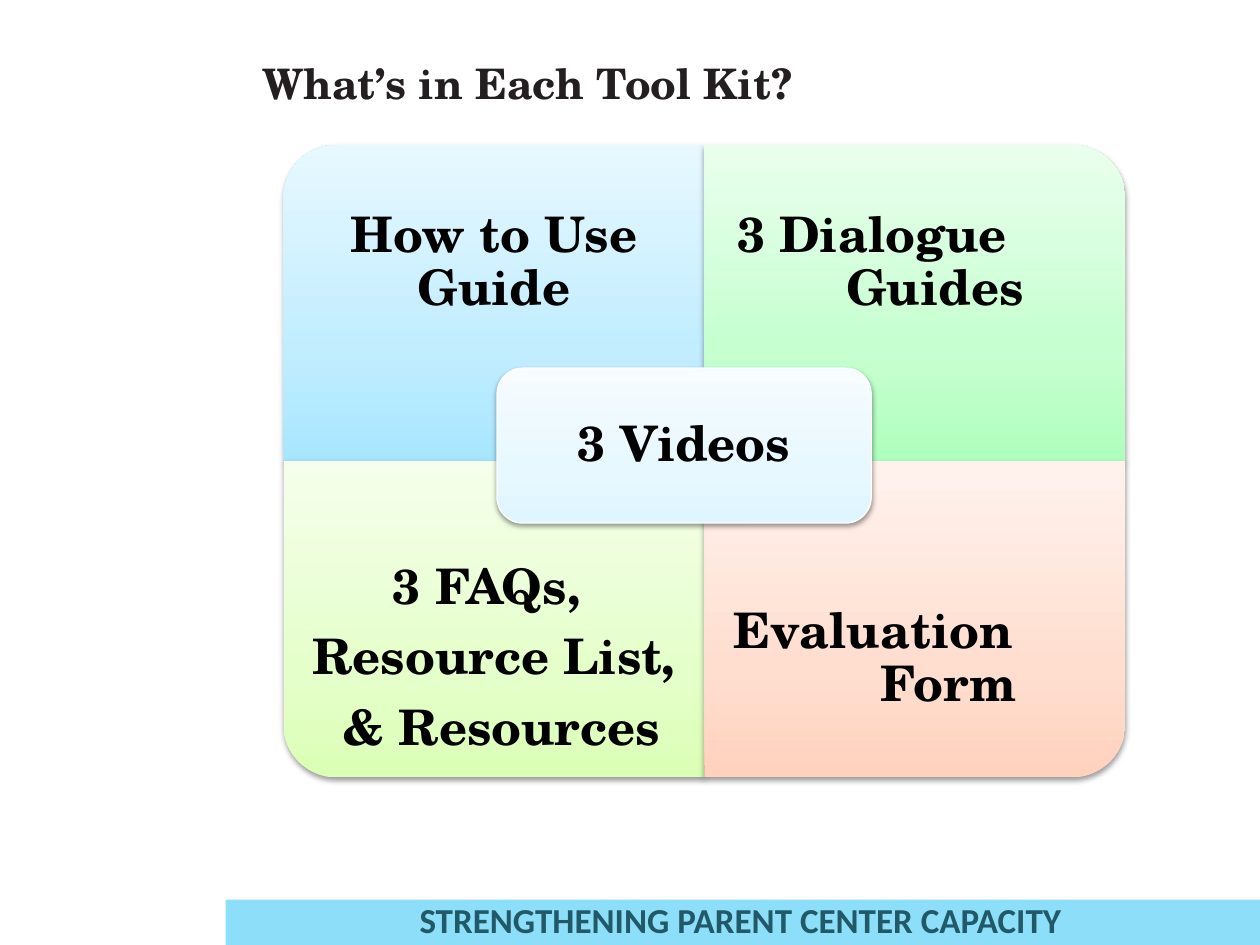
"""Build the tool kit slide: four rounded panels around a central label."""
from dataclasses import dataclass

from lxml import etree
from pptx import Presentation
from pptx import util as u
from pptx.dml.color import RGBColor
from pptx.enum import shapes, text
from pptx.oxml import parse_xml
from pptx.oxml.ns import nsdecls, qn


@dataclass(frozen=True)
class Theme:
    """Colours, fonts and type sizes."""
    serif: str = "TeX Gyre Schola"
    sans: str = "Calibri"
    title: str = "231F20"
    label: str = "000000"
    bar: str = "8DDEF8"
    footer: str = "215968"
    edge: str = "FFFFFF"
    title_size: int = 24
    label_size: int = 28
    footer_size: int = 20


THEME = Theme()
SLIDE_W, SLIDE_H = 10, 7.5
GRID_LEFT, GRID_TOP, CELL_W, CELL_H = 2.25, 1.15, 3.34, 2.51
TEXT_H = CELL_H * 0.75
HUB_W, HUB_H = 2.97, 1.23
BAR_LEFT, BAR_H = 1.79, 0.36
PARAGRAPH_GAP = 10

TITLE = "What’s in Each Tool Kit?"
FOOTER = ["STRENGTHENING ", "PARENT ", "CENTER CAPACITY"]
CENTER, LEFT = text.PP_ALIGN.CENTER, text.PP_ALIGN.LEFT
PANELS = [
    dict(col=0, row=0, turn=270, stops=("A7E6FF", "C1EDFF", "E7F8FF"), gap=0,
         lines=[("How to Use", 0, CENTER), ("Guide", 0, CENTER)]),
    dict(col=1, row=0, turn=0, stops=("AFFFBD", "C6FFD0", "E9FFED"), gap=0,
         lines=[("3 Dialogue", 0.04, LEFT), ("Guides", 0.32, CENTER)]),
    dict(col=0, row=1, turn=180, stops=("DBFFB6", "E5FFCB", "F5FFEB"), gap=PARAGRAPH_GAP,
         lines=[("3 FAQs, ", 0, CENTER), ("Resource List,", 0, CENTER),
                ("& Resources", 0.12, CENTER)]),
    dict(col=1, row=1, turn=90, stops=("FFD2BD", "FFDED0", "FFF2ED"), gap=0,
         lines=[("Evaluation", 0.01, LEFT), ("Form", 0.54, CENTER)]),
]
HUB = dict(stops=("DFF5FF", "E8F8FF", "F6FCFF"), lines=[("3 Videos", 0, CENTER)])


def inches(*lengths):
    return [u.Inches(length) for length in lengths]


def add_run(paragraph, words, font, size, color):
    run = paragraph.add_run()
    run.text = words
    run.font.name, run.font.size, run.font.bold = font, u.Pt(size), True
    run.font.color.rgb = RGBColor.from_string(color)


def prepare(frame, inset, anchor):
    frame.word_wrap = True
    frame.vertical_anchor = anchor
    frame.margin_left = frame.margin_right = u.Inches(inset)
    frame.margin_top = frame.margin_bottom = u.Inches(inset)


def write_lines(frame, lines, inset, gap=0):
    prepare(frame, inset, text.MSO_ANCHOR.MIDDLE)
    for index, (words, indent, align) in enumerate(lines):
        paragraph = frame.add_paragraph() if index else frame.paragraphs[0]
        paragraph.alignment = align
        paragraph.line_spacing = 0.9
        last = index == len(lines) - 1
        paragraph.space_after = u.Pt(PARAGRAPH_GAP if last else gap)
        if indent:
            paragraph._p.get_or_add_pPr().set("marL", str(u.Inches(indent)))
        add_run(paragraph, words, THEME.serif, THEME.label_size, THEME.label)


def add_tile(slide, preset, box, stops, turn=0):
    tile = slide.shapes.add_shape(preset, *inches(*box))
    tile.rotation = turn
    tile.line.fill.background()
    tile.fill.gradient()
    gradient = tile._element.spPr.find(qn("a:gradFill"))
    gradient.getparent().replace(gradient, parse_xml(
        f'<a:gradFill {nsdecls("a")} rotWithShape="0"><a:gsLst>'
        + "".join(f'<a:gs pos="{share * 1000}"><a:srgbClr val="{color}"/></a:gs>'
                  for share, color in zip((0, 35, 100), stops))
        + '</a:gsLst><a:lin ang="16200000" scaled="0"/></a:gradFill>'))
    tile.shadow.inherit = False
    effects = tile._element.spPr.find(qn("a:effectLst"))
    shadow = etree.SubElement(effects, qn("a:outerShdw"), blurRad=str(u.Pt(3.1)),
                              dist=str(u.Pt(1.6)), dir="5400000", rotWithShape="0")
    tint = etree.SubElement(shadow, qn("a:srgbClr"), val="000000")
    etree.SubElement(tint, qn("a:alpha"), val="38000")
    return tile


def add_panel(slide, panel):
    left = GRID_LEFT + panel["col"] * CELL_W
    top = GRID_TOP + panel["row"] * CELL_H
    sideways = panel["turn"] % 180 == 90
    width, height = (CELL_H, CELL_W) if sideways else (CELL_W, CELL_H)
    box = (left + (CELL_W - width) / 2, top + (CELL_H - height) / 2, width, height)
    add_tile(slide, shapes.MSO_SHAPE.ROUND_1_RECTANGLE, box, panel["stops"], panel["turn"])
    text_top = top + panel["row"] * (CELL_H - TEXT_H)
    label = slide.shapes.add_textbox(*inches(left, text_top, CELL_W, TEXT_H))
    write_lines(label.text_frame, panel["lines"], 0.22, panel["gap"])


def add_hub(slide):
    box = (GRID_LEFT + CELL_W - HUB_W / 2 - 0.16, GRID_TOP + CELL_H - HUB_H * 0.6, HUB_W, HUB_H)
    hub = add_tile(slide, shapes.MSO_SHAPE.ROUNDED_RECTANGLE, box, HUB["stops"])
    hub.line.color.rgb = RGBColor.from_string(THEME.edge)
    hub.line.width = u.Pt(0.75)
    write_lines(hub.text_frame, HUB["lines"], 0.12)


def add_footer(slide):
    bar = slide.shapes.add_shape(shapes.MSO_SHAPE.RECTANGLE, *inches(
        BAR_LEFT, SLIDE_H - BAR_H, SLIDE_W - BAR_LEFT, BAR_H))
    bar.shadow.inherit = False
    bar.fill.solid()
    bar.fill.fore_color.rgb = RGBColor.from_string(THEME.bar)
    bar.line.fill.background()
    motto = slide.shapes.add_textbox(*inches(3.33, 7.13, 5.13, 0.34))
    prepare(motto.text_frame, 0, text.MSO_ANCHOR.TOP)
    for words in FOOTER:
        add_run(motto.text_frame.paragraphs[0], words, THEME.sans, THEME.footer_size, THEME.footer)


def add_title(slide):
    title = slide.shapes.title
    title.left, title.top, title.width, title.height = inches(2.08, 0.46, 6.51, 0.4)
    prepare(title.text_frame, 0, text.MSO_ANCHOR.TOP)
    heading = title.text_frame.paragraphs[0]
    heading.alignment = LEFT
    add_run(heading, TITLE, THEME.serif, THEME.title_size, THEME.title)


def main():
    deck = Presentation()
    deck.slide_width, deck.slide_height = inches(SLIDE_W, SLIDE_H)
    slide = deck.slides.add_slide(deck.slide_layouts[5])
    add_title(slide)
    add_footer(slide)
    for panel in PANELS:
        add_panel(slide, panel)
    add_hub(slide)
    deck.save("out.pptx")


if __name__ == "__main__":
    main()
